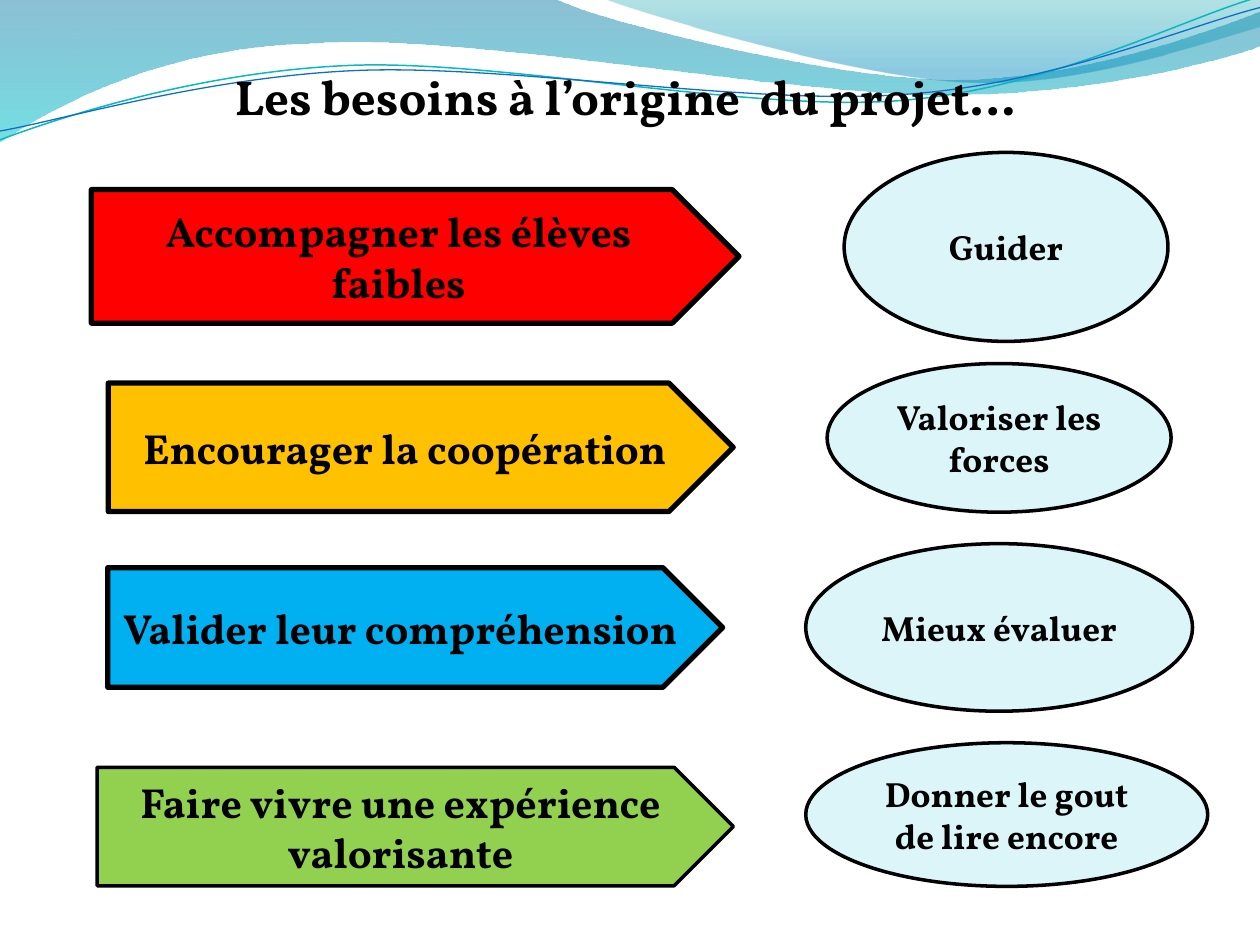
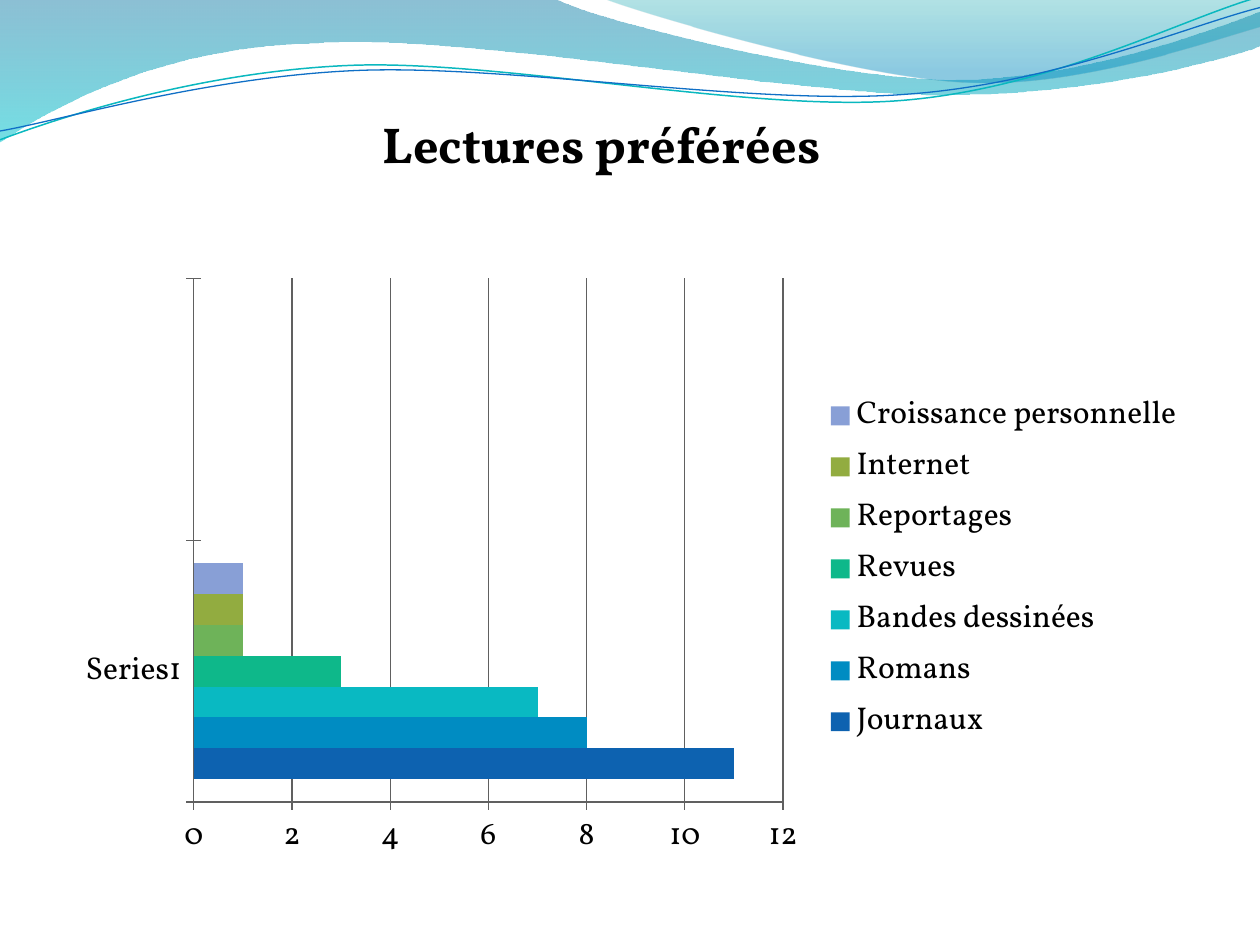
import lxml.etree
import pptx
import pptx.chart.data
import pptx.dml.color
import pptx.enum.chart
import pptx.enum.shapes
import pptx.enum.text
import pptx.oxml.ns
import pptx.util

RGBColor = pptx.dml.color.RGBColor
BLACK = RGBColor(0x00, 0x00, 0x00)
GRID_GREY = RGBColor(0x60, 0x60, 0x60)
PALE_BLUE = RGBColor(0xDB, 0xF5, 0xF9)
RED = RGBColor(0xFF, 0x00, 0x00)
AMBER = RGBColor(0xFF, 0xC0, 0x00)
SKY_BLUE = RGBColor(0x00, 0xB0, 0xF0)
GREEN = RGBColor(0x92, 0xD0, 0x50)
WAVE_BLUE = RGBColor(0x00, 0x74, 0xA1)
WAVE_CYAN = RGBColor(0x00, 0xC6, 0xCF)
WAVE_TEAL = RGBColor(0x00, 0xA1, 0xA9)
WAVE_AZURE = RGBColor(0x00, 0x8B, 0xBF)
LINE_TEAL = RGBColor(0x0A, 0xB8, 0xBF)
LINE_BLUE = RGBColor(0x0F, 0x6F, 0xC6)

FONT = "Vollkorn"

presentation = pptx.Presentation()
presentation.slide_width = pptx.util.Inches(10)
presentation.slide_height = pptx.util.Inches(7.5)
COLUMN = presentation.slide_width / 100
ROW = presentation.slide_height / 75


def place(left, top, width, height):
    """Turn grid columns and rows into slide lengths."""
    return [pptx.util.Emu(round(length)) for length in
            (left * COLUMN, top * ROW, width * COLUMN, height * ROW)]


def write_text(shape, text, size, anchor=pptx.enum.text.MSO_ANCHOR.MIDDLE):
    frame = shape.text_frame
    frame.word_wrap = True
    frame.auto_size = pptx.enum.text.MSO_AUTO_SIZE.NONE
    frame.vertical_anchor = anchor
    paragraph = frame.paragraphs[0]
    paragraph.alignment = pptx.enum.text.PP_ALIGN.CENTER
    run = paragraph.add_run()
    run.text = text
    run.font.name = FONT
    run.font.size = pptx.util.Pt(size)
    run.font.bold = True
    run.font.color.rgb = BLACK


# Slides and titles
titles = [
    ("Les besoins à l’origine  du projet…", 28, (3.55, 2.85, 92.1, 7.1)),
    ("Lectures préférées", 28.8, (2.75, 8.3, 90, 5.5)),
]
slides = []
for text, size, box in titles:
    slide = presentation.slides.add_slide(presentation.slide_layouts[5])
    title = slide.shapes.title
    title.left, title.top, title.width, title.height = place(*box)
    write_text(title, text, size, pptx.enum.text.MSO_ANCHOR.BOTTOM)
    frame = title.text_frame
    frame.margin_left = frame.margin_right = frame.margin_bottom = 0
    frame.margin_top = pptx.util.Inches(0.05)
    slides.append(slide)
needs_slide, readings_slide = slides

# Wave band: a segment of one point is straight, one of three is a Bézier curve
waves = [
    {"start": (0, 0), "stops": [(0, WAVE_BLUE, 45), (1, WAVE_CYAN, 55)], "segments": [
        [(44, -0.1)],
        [(47.6, 1.7), (66.4, 6.3), (75.8, 6.3)],
        [(85.3, 6.3), (95.8, 2.6), (100, 0.9)],
        [(100.1, 3.6)],
        [(98.3, 4.4), (87, 7.6), (74.6, 7.5)],
        [(62.2, 7.5), (38.2, 2.8), (25.7, 3.4)],
        [(12.9, 3.6), (4.6, 8.3), (-0.1, 11.3)],
        [(0, 0)]]},
    {"start": (47.9, -0.1), "stops": [(0, WAVE_TEAL, 30), (0.8, WAVE_AZURE, 45)], "segments": [
        [(50.9, 1.1), (68.2, 6.2), (76.9, 6.5)],
        [(85.6, 6.9), (96.1, 3.2), (100, 2.1)],
        [(100, 0)],
        [(47.9, -0.1)]]},
    {"start": (0, 11.1), "line": (LINE_TEAL, 0.85), "segments": [
        [(4.8, 9.3), (15.8, 5.7), (27.7, 5.2)],
        [(39.5, 4.7), (59.3, 8.9), (71.3, 8)],
        [(83.3, 7.1), (93.8, 1.5), (99.8, -0.2)]]},
    {"start": (0, 10.4), "line": (LINE_BLUE, 0.75), "segments": [
        [(4.7, 9.6), (16.4, 6.1), (28.3, 5.6)],
        [(40.3, 5.1), (59.7, 8.4), (71.7, 7.5)],
        [(83.6, 6.7), (94.1, 2.1), (100, 0.6)]]},
]
master_shapes = presentation.slide_master.shapes
for index, wave in enumerate(waves):
    points = [wave["start"]] + [point for segment in wave["segments"] for point in segment]
    vertices = [(x * COLUMN, y * ROW) for x, y in points]
    builder = needs_slide.shapes.build_freeform(*vertices[0])
    builder.add_line_segments(vertices[1:], close="stops" in wave)
    shape = builder.convert_to_shape()
    shape.shadow.inherit = False

    # Join the three points of each curved segment into one Bézier command
    lines = shape.element.iter(pptx.oxml.ns.qn("a:lnTo"))
    lines = iter(list(lines))
    for segment in wave["segments"]:
        commands = [next(lines) for _ in segment]
        if len(segment) == 3:
            curve = lxml.etree.Element(pptx.oxml.ns.qn("a:cubicBezTo"))
            commands[0].addprevious(curve)
            for command in commands:
                curve.append(command[0])
                command.getparent().remove(command)

    if "stops" in wave:
        shape.line.fill.background()
        shape.fill.gradient()
        shape.fill.gradient_angle = 270
        for stop, (position, color, _) in zip(shape.fill.gradient_stops, wave["stops"]):
            stop.position = position
            stop.color.rgb = color
        color_elements = shape.element.iter(pptx.oxml.ns.qn("a:srgbClr"))
        for element, (_, _, opacity) in zip(color_elements, wave["stops"]):
            alpha = lxml.etree.SubElement(element, pptx.oxml.ns.qn("a:alpha"))
            alpha.set("val", str(opacity * 1000))
    else:
        color, width = wave["line"]
        shape.fill.background()
        shape.line.color.rgb = color
        shape.line.width = pptx.util.Pt(width)

    # The band belongs to the master, behind its placeholders
    properties = next(shape.element.iter(pptx.oxml.ns.qn("p:cNvPr")))
    properties.set("id", str(100 + index))
    master_shapes.element.insert(2 + index, shape.element)

# Needs and what answers them
ARROW = pptx.enum.shapes.MSO_SHAPE.PENTAGON
ELLIPSE = pptx.enum.shapes.MSO_SHAPE.OVAL
need_shapes = [
    (ARROW, "Accompagner les élèves faibles", (7.25, 15.05, 51.4, 10.6), RED, 3),
    (ARROW, "Encourager la coopération", (8.6, 30.4, 49.6, 10.2), AMBER, 3),
    (ARROW, "Valider leur compréhension", (8.55, 45.05, 48.8, 9.5), SKY_BLUE, 3),
    (ARROW, "Faire vivre une expérience valorisante", (7.7, 60.9, 50.5, 9.4), GREEN, 2),
    (ELLIPSE, "Guider", (67, 12.1, 25.7, 15), PALE_BLUE, 2),
    (ELLIPSE, "Valoriser les forces", (65.65, 28.85, 27.3, 11.8), PALE_BLUE, 2),
    (ELLIPSE, "Mieux évaluer", (63.95, 43.15, 30.7, 13.3), PALE_BLUE, 2),
    (ELLIPSE, "Donner le gout de lire encore", (63.95, 58.95, 31.9, 11.4), PALE_BLUE, 2),
]
for kind, text, box, color, line_width in need_shapes:
    shape = needs_slide.shapes.add_shape(kind, *place(*box))
    shape.shadow.inherit = False
    shape.fill.solid()
    shape.fill.fore_color.rgb = color
    shape.line.color.rgb = BLACK
    shape.line.width = pptx.util.Pt(line_width)
    write_text(shape, text, 24 if kind == ARROW else 20)

# Favourite readings
readings = [
    ("Journaux", 11, RGBColor(0x0D, 0x62, 0xB0)),
    ("Romans", 8, RGBColor(0x00, 0x8C, 0xC2)),
    ("Bandes dessinées", 7, RGBColor(0x09, 0xB9, 0xC2)),
    ("Revues", 3, RGBColor(0x0E, 0xB8, 0x8A)),
    ("Reportages", 1, RGBColor(0x6E, 0xB3, 0x59)),
    ("Internet", 1, RGBColor(0x92, 0xAC, 0x40)),
    ("Croissance personnelle", 1, RGBColor(0x88, 0x9F, 0xD6)),
]
chart_data = pptx.chart.data.CategoryChartData()
chart_data.categories = ["Series1", ""]
for name, votes, _ in readings:
    chart_data.add_series(name, [votes, None])
chart = readings_slide.shapes.add_chart(
    pptx.enum.chart.XL_CHART_TYPE.BAR_CLUSTERED, *place(5, 21.15, 90, 48), chart_data).chart
chart.has_title = False
chart.font.name = FONT
chart.font.size = pptx.util.Pt(18)
chart.font.color.rgb = BLACK
chart.has_legend = True
chart.legend.position = pptx.enum.chart.XL_LEGEND_POSITION.RIGHT
chart.legend.include_in_layout = False

plot = chart.plots[0]
plot.vary_by_categories = False
plot.gap_width = 150
plot.overlap = 0
for series, (_, _, color) in zip(plot.series, readings):
    series.format.fill.solid()
    series.format.fill.fore_color.rgb = color

chart.value_axis.minimum_scale = 0
chart.value_axis.maximum_scale = 12
chart.value_axis.major_unit = 2
chart.value_axis.has_major_gridlines = True
chart.category_axis.has_major_gridlines = False
for axis in (chart.value_axis, chart.category_axis):
    axis.major_tick_mark = pptx.enum.chart.XL_TICK_MARK.CROSS
    axis.format.line.color.rgb = GRID_GREY
    axis.format.line.width = pptx.util.Pt(0.75)
gridlines = chart.value_axis.major_gridlines.format.line
gridlines.color.rgb = GRID_GREY
gridlines.width = pptx.util.Pt(0.75)

presentation.save("out.pptx")
